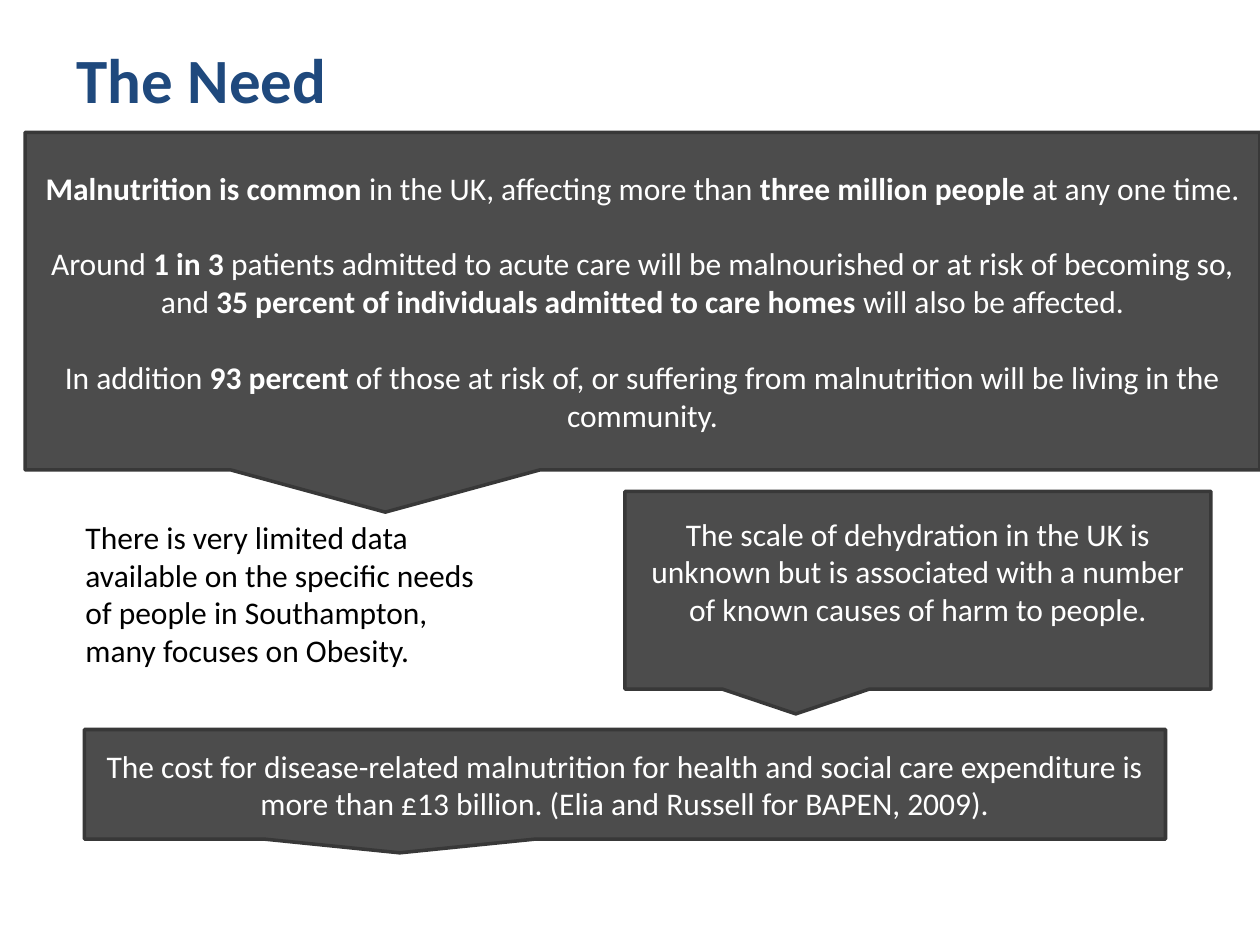
import pptx
import pptx.dml.color
import pptx.enum.shapes
import pptx.enum.text
import pptx.util

Inches = pptx.util.Inches
Pt = pptx.util.Pt
RGBColor = pptx.dml.color.RGBColor
ALIGN = pptx.enum.text.PP_ALIGN
ANCHOR = pptx.enum.text.MSO_ANCHOR

NAVY = RGBColor(0x1F, 0x49, 0x7D)
CHARCOAL = RGBColor(0x4C, 0x4C, 0x4C)
OUTLINE = RGBColor(0x38, 0x38, 0x38)
WHITE = RGBColor(0xFF, 0xFF, 0xFF)
BLACK = RGBColor(0, 0, 0)

# Each paragraph is a list of spans; every second span is bold.
MALNUTRITION = [
    ["", "Malnutrition is common ", "in the UK, affecting more than ",
     "three million people ", "at any one time."],
    ["Around ", "1 in 3 ",
     "patients admitted to acute care will be malnourished or at risk of becoming so, and ",
     "35 percent of individuals admitted to care homes ", "will also be affected."],
    ["In addition ", "93 percent ",
     "of those at risk of, or suffering from malnutrition will be living in the community."],
]
DEHYDRATION = [["The scale of dehydration in the UK is unknown but is associated "
                "with a number of known causes of harm to people."]]
COST = [["The cost for disease-related malnutrition for health and social care expenditure "
         "is more than £13 billion. (Elia and Russell for BAPEN, 2009)."]]
LOCAL_DATA = [["There is very limited data available on the specific needs of people "
               "in Southampton, many focuses on Obesity."]]


def write_text(frame, paragraphs, size=18, color=WHITE, bold=False,
               align=ALIGN.LEFT, anchor=ANCHOR.TOP, gap=0):
    """Fill a frame with paragraphs whose odd-numbered spans are emphasised."""
    frame.word_wrap = True
    frame.vertical_anchor = anchor
    for index, spans in enumerate(paragraphs):
        para = frame.add_paragraph() if index else frame.paragraphs[0]
        para.alignment = align
        if index:
            para.space_before = Pt(gap)
        for position, text in enumerate(spans):
            if not text:
                continue
            span = para.add_run()
            span.text = text
            span.font.name = "Calibri"
            span.font.size = Pt(size)
            span.font.bold = bold or position % 2 == 1
            span.font.color.rgb = color


def add_title(slide, text):
    title = slide.shapes.title
    title.left, title.top = Inches(0.51), Inches(0)
    title.width, title.height = Inches(9), Inches(1.25)
    title.text_frame.auto_size = pptx.enum.text.MSO_AUTO_SIZE.NONE
    write_text(title.text_frame, [[text]], size=36, color=NAVY, bold=True,
               anchor=ANCHOR.MIDDLE)


def add_callout(slide, left, top, width, height, paragraphs, gap=0, bottom_inset=0.05):
    callout = slide.shapes.add_shape(
        pptx.enum.shapes.MSO_SHAPE.RECTANGULAR_CALLOUT,
        Inches(left), Inches(top), Inches(width), Inches(height))
    callout.shadow.inherit = False
    callout.fill.solid()
    callout.fill.fore_color.rgb = CHARCOAL
    callout.line.color.rgb = OUTLINE
    callout.line.width = Pt(2)
    callout.text_frame.margin_bottom = Inches(bottom_inset)
    write_text(callout.text_frame, paragraphs, align=ALIGN.CENTER,
               anchor=ANCHOR.MIDDLE, gap=gap)


def add_note(slide, left, top, width, height, paragraphs):
    box = slide.shapes.add_textbox(Inches(left), Inches(top), Inches(width), Inches(height))
    write_text(box.text_frame, paragraphs, color=BLACK)


def main():
    deck = pptx.Presentation()
    deck.slide_width, deck.slide_height = Inches(10), Inches(7.5)
    slide = deck.slides.add_slide(deck.slide_layouts.get_by_name("Title Only"))
    add_title(slide, "The Need")
    add_callout(slide, 0.2, 1.05, 9.8, 2.68, MALNUTRITION, gap=21.6)
    add_callout(slide, 4.96, 3.9, 4.65, 1.57, DEHYDRATION, bottom_inset=0.35)
    add_callout(slide, 0.67, 5.79, 8.58, 0.87, COST)
    add_note(slide, 0.58, 4.06, 3.31, 1.31, LOCAL_DATA)
    deck.save("out.pptx")


if __name__ == "__main__":
    main()
